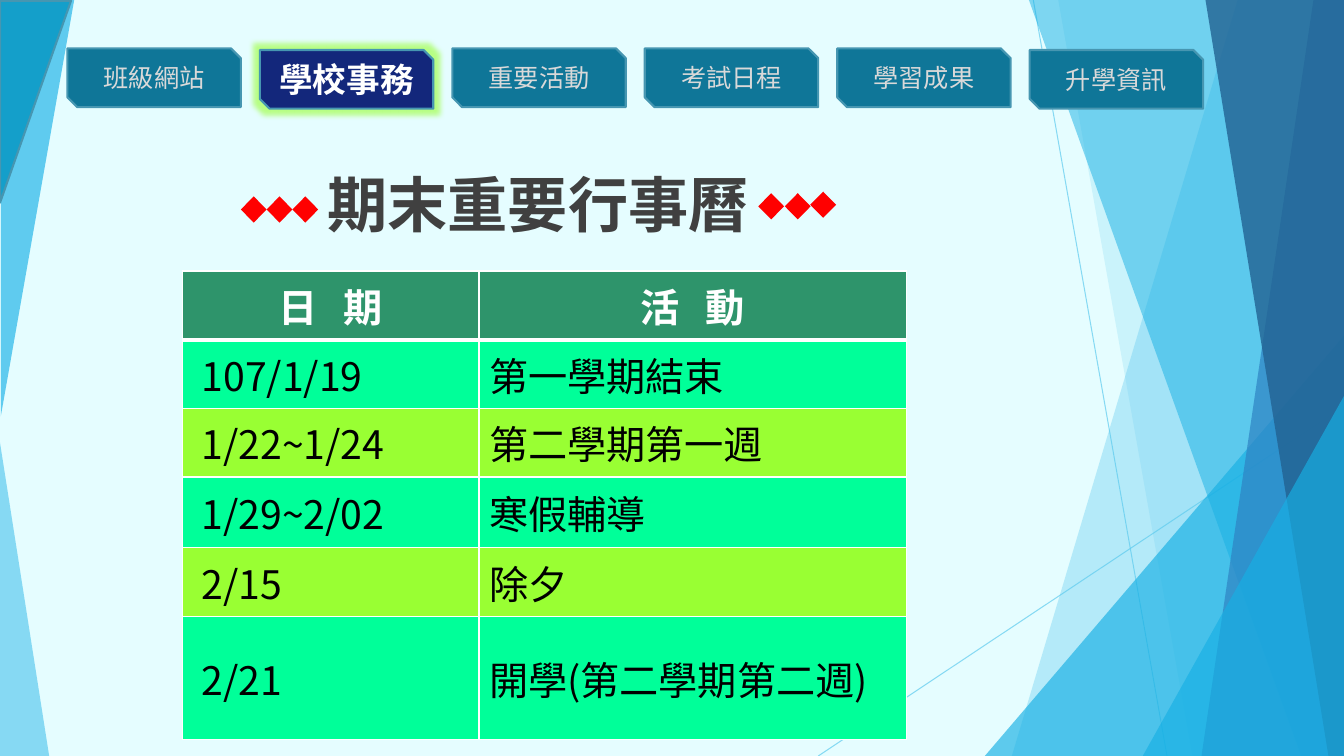
from dataclasses import dataclass

from lxml.etree import SubElement
from pptx import Presentation
from pptx.dml.color import RGBColor
from pptx.enum.shapes import MSO_CONNECTOR as LINE, MSO_SHAPE as SHAPE
from pptx.enum.text import MSO_ANCHOR as ANCHOR, PP_ALIGN as ALIGN
from pptx.oxml.ns import qn
from pptx.util import Cm, Pt

WIDTH, HEIGHT = 33.87, 19.05
CJK = "Noto Sans CJK TC"


@dataclass
class Band:
    points: list[tuple[float, float]]
    color: str
    alpha: int


@dataclass
class Triangle:
    box: tuple[float, float, float, float]
    apex: float
    color: str
    alpha: int = 100
    rotation: int = 0
    edge: str = ""


@dataclass
class Tab:
    text: str
    top: float = 1.22
    font: str = "Cabin"
    active: bool = False


def paint(fill, color: str, alpha: int = 100) -> None:
    fill.solid()
    fill.fore_color.rgb = RGBColor.from_string(color)
    if alpha < 100:
        clr = fill._xPr.find(".//" + qn("a:srgbClr"))
        SubElement(clr, qn("a:alpha"), val=str(alpha * 1000))


def finish(sp, color: str, alpha: int = 100, edge: str = "") -> None:
    sp.shadow.inherit = False
    paint(sp.fill, color, alpha)
    if edge:
        paint(sp.line.fill, edge)
        sp.line.width = Pt(1.5)
    else:
        sp.line.fill.background()


def write(tf, text: str, color: str, align, **font):
    p = tf.paragraphs[0]
    p.alignment = align
    r = p.add_run()
    r.text = text
    for name, value in font.items():
        setattr(r.font, name, value)
    paint(r.font.fill, color)
    SubElement(r._r.get_or_add_rPr(), qn("a:ea"), typeface=CJK)
    return p


def add_ray(s, start: tuple[float, float], end: tuple[float, float]) -> None:
    ray = s.shapes.add_connector(LINE.STRAIGHT, *map(Cm, start + end))
    paint(ray.line.fill, "5FCBEF", 70)
    ray.line.width = Pt(0.75)
    SubElement(ray._element.spPr, qn("a:effectLst"))


def add_band(s, band: Band) -> None:
    first, *rest = [(Cm(x), Cm(y)) for x, y in band.points]
    builder = s.shapes.build_freeform(*first)
    builder.add_line_segments(rest, close=True)
    finish(builder.convert_to_shape(), band.color, band.alpha)


def add_triangle(s, tri: Triangle) -> None:
    sp = s.shapes.add_shape(SHAPE.ISOSCELES_TRIANGLE, *map(Cm, tri.box))
    sp.adjustments[0] = tri.apex
    sp.rotation = tri.rotation
    finish(sp, tri.color, tri.alpha, tri.edge)


def add_tab(s, index: int, tab: Tab) -> None:
    box = map(Cm, (1.7 + 4.85 * index, tab.top, 4.37, 1.48))
    sp = s.shapes.add_shape(SHAPE.SNIP_2_DIAG_RECTANGLE, *box)
    finish(sp, "13277B" if tab.active else "0F7698", edge="4696B1")
    if tab.active:
        effects = sp._element.spPr.find(qn("a:effectLst"))
        glow = SubElement(effects, qn("a:glow"), rad=str(Pt(8)))
        clr = SubElement(glow, qn("a:srgbClr"), val="99FF33")
        SubElement(clr, qn("a:alpha"), val="60000")
    tf = sp.text_frame
    tf.vertical_anchor = ANCHOR.MIDDLE
    write(tf, tab.text, "FFFFFF" if tab.active else "D9D9D9", ALIGN.CENTER,
          name=tab.font, size=Pt(24 if tab.active else 18), bold=tab.active)


def add_diamond(s, left: float, top: float) -> None:
    sp = s.shapes.add_shape(SHAPE.DIAMOND, *map(Cm, (left, top, 0.65, 0.66)))
    finish(sp, "FF0000")


def add_borders(cell, top: float, bottom: float) -> None:
    tcPr = cell._tc.get_or_add_tcPr()
    widths = {"lnL": 1, "lnR": 1, "lnT": top, "lnB": bottom}
    for i, (side, width) in enumerate(widths.items()):
        ln = SubElement(tcPr, qn("a:" + side), w=str(Pt(width)))
        fill = SubElement(ln, qn("a:solidFill"))
        SubElement(fill, qn("a:srgbClr"), val="FFFFFF")
        tcPr.insert(i, ln)


def add_calendar(s, rows: list[tuple[str, str]]) -> None:
    widths, heights = (7.47, 10.77), (1.73, 1.73, 1.73, 1.78, 1.73, 3.07)
    box = map(Cm, (4.6, 6.83, sum(widths), sum(heights)))
    table = s.shapes.add_table(len(rows), 2, *box).table
    for column, width in zip(table.columns, widths):
        column.width = Cm(width)
    for i, row in enumerate(rows):
        table.rows[i].height = Cm(heights[i])
        header = i == 0
        color = "2E946B" if header else ("99FF33", "00FF99")[i % 2]
        for j, text in enumerate(row):
            cell = table.cell(i, j)
            cell.vertical_anchor = ANCHOR.MIDDLE
            if j == 0 and not header:
                cell.margin_left = Cm(0.48)
            paint(cell.fill, color)
            add_borders(cell, 3 if i == 1 else 1, 3 if header else 1)
            p = write(cell.text_frame, text, "FFFFFF" if header else "000000",
                      ALIGN.CENTER if header else ALIGN.LEFT,
                      name="Noto Sans CJK SC", size=Pt(28), bold=header)
            pPr = p._p.get_or_add_pPr()
            pPr.set("marL", str(Cm(0.97)))
            pPr.set("indent", str(Cm(-0.97)))
            if header:
                p.runs[0]._r.rPr.set("spc", "630")


def add_title(s, text: str) -> None:
    sp = s.shapes.title
    sp.left, sp.top, sp.width, sp.height = map(Cm, (8, 4.06, 13.64, 2.11))
    tf = sp.text_frame
    tf.word_wrap = True
    tf.vertical_anchor = ANCHOR.MIDDLE
    write(tf, text, "404040", ALIGN.LEFT, name="Cabin", size=Pt(43), bold=True)


RIGHT = [(WIDTH, 0), (WIDTH, HEIGHT)]
BACKDROP = [
    Band([(31.19, 0), *RIGHT, (25.5, HEIGHT)], "5FCBEF", 36),
    Band([(26.67, 0), *RIGHT, (30.05, HEIGHT)], "5FCBEF", 20),
    Triangle((24.82, 8.46, 9.05, 10.59), 1, "17B0E4", 66),
    Band([(25.93, 0), *RIGHT, (32.79, HEIGHT)], "17B0E4", 50),
    Band([(33.1, 0), *RIGHT, (30.28, HEIGHT)], "2E83C3", 70),
    Band([(30.38, 0), *RIGHT, (33.48, HEIGHT)], "226292", 80),
    Triangle((28.8, 9.98, 5.07, 9.07), 1, "17B0E4", 66),
    Triangle((0, 11.15, 1.24, 7.9), 0, "5FCBEF", 70),
    Triangle((0.02, 0, 1.85, 10.49), 1, "5FCBEF", rotation=180),
    Triangle((-1.65, 1.67, 5.09, 1.79), 0, "149FCA", rotation=90, edge="4696B1"),
]
TABS = [
    Tab("班級網站", font=CJK),
    Tab("學校事務", top=1.26, active=True),
    Tab("重要活動"),
    Tab("考試日程"),
    Tab("學習成果"),
    Tab("升學資訊", top=1.26),
]
DIAMONDS = [(6.07, 4.95), (6.72, 4.95), (7.37, 4.95),
            (19.11, 4.87), (19.78, 4.87), (20.42, 4.83)]
CALENDAR = [
    ("日 期", "活 動"),
    ("107/1/19", "第一學期結束"),
    ("1/22~1/24", "第二學期第一週"),
    ("1/29~2/02", "寒假輔導"),
    ("2/15", "除夕"),
    ("2/21", "開學(第二學期第二週)"),
]


def main() -> None:
    prs = Presentation()
    prs.slide_width, prs.slide_height = Cm(WIDTH), Cm(HEIGHT)
    s = prs.slides.add_slide(prs.slide_layouts[5])
    paint(s.background.fill, "E5FDFF")
    add_ray(s, (26.04, 0), (29.41, HEIGHT))
    add_ray(s, (WIDTH, 10.24), (20.62, HEIGHT))
    for part in BACKDROP:
        (add_band if isinstance(part, Band) else add_triangle)(s, part)
    for i, tab in enumerate(TABS):
        add_tab(s, i, tab)
    add_title(s, "期末重要行事曆")
    add_calendar(s, CALENDAR)
    for left, top in DIAMONDS:
        add_diamond(s, left, top)
    prs.save("out.pptx")


if __name__ == "__main__":
    main()
